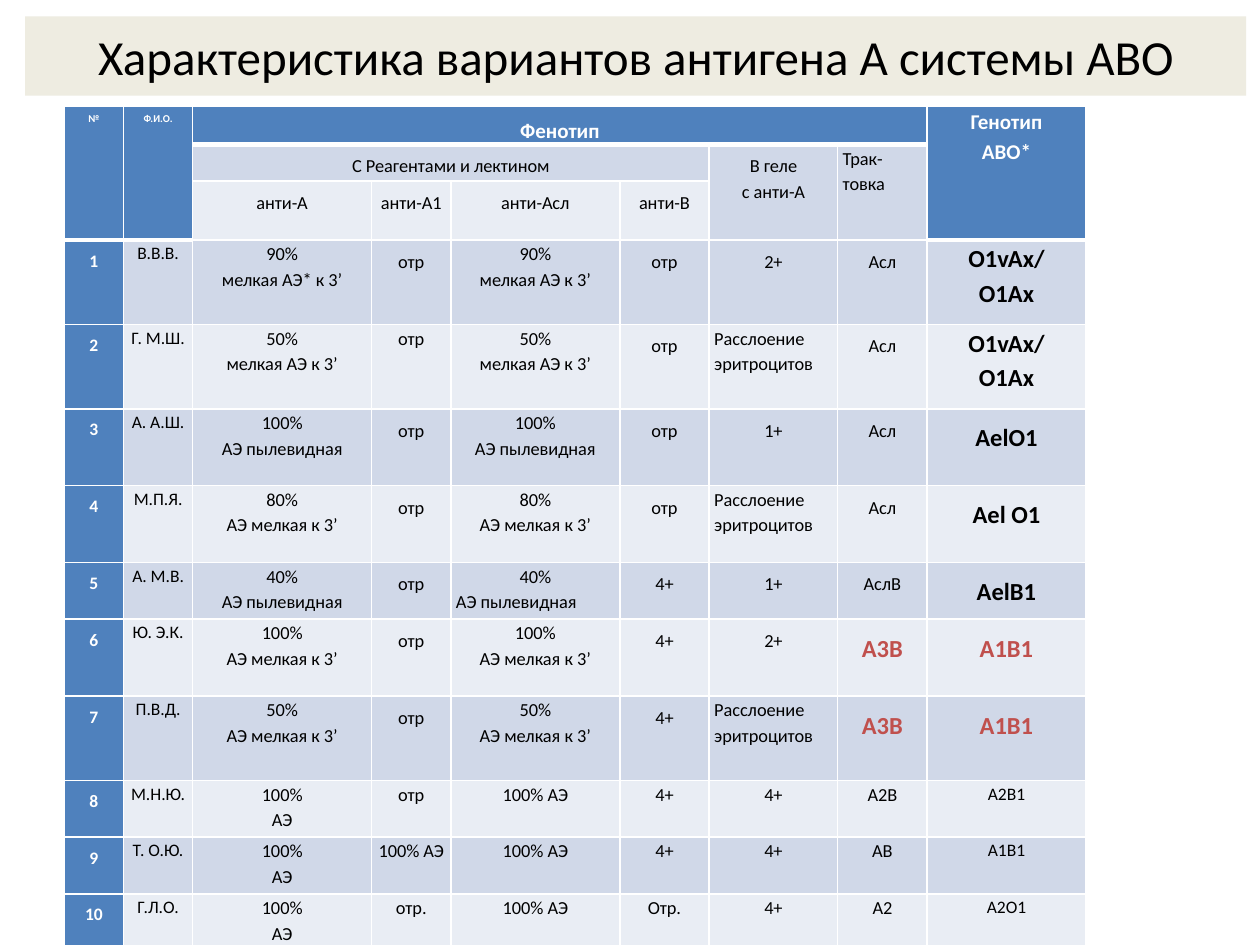
import pptx
import pptx.dml.color
import pptx.enum.text
import pptx.oxml.ns
import pptx.util
from dataclasses import dataclass
from lxml import etree
from pptx.util import Inches

ALIGN = pptx.enum.text.PP_ALIGN


@dataclass(frozen=True)
class Theme:
    font: str = "Calibri"
    white: str = "FFFFFF"
    black: str = "000000"
    title_fill: str = "EEECE1"
    header: str = "4F81BD"
    band_dark: str = "D0D8E8"
    band_light: str = "E9EDF4"
    accent: str = "C0504D"
    title_size: float = 28
    genotype_size: float = 14
    header_size: float = 12
    body_size: float = 10.5
    name_size: float = 10
    corner_size: float = 6
    loose: float = 1.5
    tight: float = 1.15


THEME = Theme()
TITLE = "Характеристика вариантов антигена А системы АВО"
COLUMNS = [0.47, 0.55, 1.42, 0.63, 1.34, 0.71, 1.02, 0.71, 1.26]
ROWS = [0.3, 0.29, 0.47, 0.67, 0.67, 0.61, 0.61, 0.45, 0.61, 0.67, 0.45, 0.45, 0.45]
HEADER_ROWS = 3
NAME, ANTI_A, ANTI_A1, ANTI_ASL, GEL, READING, GENOTYPE = 1, 2, 3, 4, 6, 7, 8
LAYERS = "Расслоение эритроцитов"

# Merged header cells: first row, first column, last row, last column
SPANS = [(0, 0, 2, 0), (0, 1, 2, 1), (0, 2, 0, 7), (0, 8, 2, 8),
         (1, 2, 1, 5), (1, 6, 2, 6), (1, 7, 2, 7)]
TOP_HEADERS = [(0, "№", THEME.corner_size, THEME.loose),
               (1, "Ф.И.О.", THEME.corner_size, THEME.loose),
               (2, "Фенотип", THEME.header_size, THEME.loose),
               (8, "Генотип\nАВО*", THEME.header_size, THEME.tight)]
SUB_HEADERS = [(1, 2, "С Реагентами и лектином"), (1, 6, "В геле\nс анти-А"),
               (1, 7, "Трак-товка"), (2, 2, "анти-А"), (2, 3, "анти-А1"),
               (2, 4, "анти-Асл"), (2, 5, "анти-В")]
PATIENTS = [
    ["В.В.В.", "90%\nмелкая АЭ* к 3’", "отр", "90%\nмелкая АЭ к 3’", "отр", "2+", "Асл", "O1vAx/\nO1Ax"],
    ["Г. М.Ш.", "50%\nмелкая АЭ к 3’", "отр", "50%\nмелкая АЭ к 3’", "отр", LAYERS, "Асл", "O1vAx/\nO1Ax"],
    ["А. А.Ш.", "100%\nАЭ пылевидная", "отр", "100%\nАЭ пылевидная", "отр", "1+", "Асл", "АelO1"],
    ["М.П.Я.", "80%\nАЭ мелкая к 3’", "отр", "80%\nАЭ мелкая к 3’", "отр", LAYERS, "Асл", "Аel O1"],
    ["А. М.В.", "40%\nАЭ пылевидная", "отр", "40%\nАЭ пылевидная", "4+", "1+", "АслB", "АelB1"],
    ["Ю. Э.К.", "100%\nАЭ мелкая к 3’", "отр", "100%\nАЭ мелкая к 3’", "4+", "2+", "А3В", "А1В1"],
    ["П.В.Д.", "50%\nАЭ мелкая к 3’", "отр", "50%\nАЭ мелкая к 3’", "4+", LAYERS, "А3В", "А1В1"],
    ["М.Н.Ю.", "100%\nАЭ", "отр", "100% АЭ", "4+", "4+", "А2В", "А2В1"],
    ["Т. О.Ю.", "100%\nАЭ", "100% АЭ", "100% АЭ", "4+", "4+", "АВ", "А1В1"],
    ["Г.Л.О.", "100%\nАЭ", "отр.", "100% АЭ", "Отр.", "4+", "А2", "А2О1"],
]


def apply(target, values):
    for name, value in values.items():
        setattr(target, name, value)


def paint(fill, color):
    fill.solid()
    fill.fore_color.rgb = pptx.dml.color.RGBColor.from_string(color)


def write(frame, text, size, color=THEME.black, bold=False, align=ALIGN.CENTER, spacing=1.0):
    """Write each line of the text as one paragraph."""
    for index, line in enumerate(text.split("\n")):
        para = frame.add_paragraph() if index else frame.paragraphs[0]
        apply(para, {"alignment": align, "line_spacing": spacing})
        span = para.add_run()
        span.text = line
        apply(span.font, {"name": THEME.font, "size": pptx.util.Pt(size), "bold": bold})
        span.font.color.rgb = pptx.dml.color.RGBColor.from_string(color)


def border(cell, bottom=1):
    properties = cell._tc.get_or_add_tcPr()
    for side, points in (("L", 1), ("R", 1), ("T", 1), ("B", bottom)):
        line = etree.SubElement(properties, pptx.oxml.ns.qn(f"a:ln{side}"),
                                w=str(pptx.util.Pt(points)))
        solid = etree.SubElement(line, pptx.oxml.ns.qn("a:solidFill"))
        etree.SubElement(solid, pptx.oxml.ns.qn("a:srgbClr"), val=THEME.white)


def add_title(page):
    box = page.shapes.title
    apply(box, {"left": Inches(0.2), "top": Inches(0.13),
                "width": Inches(9.69), "height": Inches(0.63)})
    paint(box.fill, THEME.title_fill)
    apply(box.text_frame, {"vertical_anchor": pptx.enum.text.MSO_ANCHOR.MIDDLE,
                           "auto_size": pptx.enum.text.MSO_AUTO_SIZE.NONE})
    write(box.text_frame, TITLE, THEME.title_size)


def add_grid(page):
    table = page.shapes.add_table(len(ROWS), len(COLUMNS), Inches(0.51), Inches(0.84),
                                  Inches(sum(COLUMNS)), Inches(sum(ROWS))).table
    for column, width in zip(table.columns, COLUMNS):
        column.width = Inches(width)
    for row, height in zip(table.rows, ROWS):
        row.height = Inches(height)
    for row in range(len(ROWS)):
        for column in range(len(COLUMNS)):
            cell = table.cell(row, column)
            apply(cell, {"margin_left": Inches(0.04), "margin_right": Inches(0.04),
                         "margin_top": 0, "margin_bottom": 0})
            in_header = row == 0 or (row < HEADER_ROWS and column in (0, NAME, GENOTYPE))
            border(cell, 3 if in_header else 1)
            band = THEME.band_dark if row % 2 else THEME.band_light
            paint(cell.fill, THEME.header if in_header or column == 0 else band)
    for top, left, bottom, right in SPANS:
        table.cell(top, left).merge(table.cell(bottom, right))
    return table


def fill_header(table):
    for column, text, size, spacing in TOP_HEADERS:
        write(table.cell(0, column).text_frame, text, size, THEME.white, True, spacing=spacing)
    for row, column, text in SUB_HEADERS:
        narrow = column == READING
        write(table.cell(row, column).text_frame, text, THEME.body_size,
              align=ALIGN.LEFT if narrow else ALIGN.CENTER,
              spacing=THEME.tight if narrow else THEME.loose)
    table.cell(1, GEL).text_frame.paragraphs[1].line_spacing = THEME.tight


def patient_format(number, column, text):
    """Choose the text format of one result cell."""
    values = {"size": THEME.body_size, "spacing": THEME.loose}
    if (number >= 8 or column in (NAME, ANTI_A, ANTI_ASL) or "\n" in text or text == LAYERS
            or (number, column) == (2, ANTI_A1)):
        values["spacing"] = THEME.tight
    if text == LAYERS:
        values["align"] = ALIGN.LEFT
    if column == NAME or (column == GENOTYPE and number >= 8):
        values["size"] = THEME.name_size
    unusual = number in (6, 7) and column in (READING, GENOTYPE)
    if unusual or (column == GENOTYPE and number < 8):
        values.update(size=THEME.genotype_size, bold=True)
    if unusual:
        values["color"] = THEME.accent
    return values


def fill_patients(table):
    for number, results in enumerate(PATIENTS, 1):
        row = number + HEADER_ROWS - 1
        write(table.cell(row, 0).text_frame, str(number), THEME.name_size,
              THEME.white, True, spacing=THEME.loose)
        for column, text in enumerate(results, 1):
            write(table.cell(row, column).text_frame, text,
                  **patient_format(number, column, text))
    # The fifth patient's second line is set to the left
    table.cell(7, ANTI_ASL).text_frame.paragraphs[1].alignment = ALIGN.LEFT


def main():
    deck = pptx.Presentation()
    apply(deck, {"slide_width": Inches(10), "slide_height": Inches(7.5)})
    page = deck.slides.add_slide(deck.slide_layouts[5])
    add_title(page)
    table = add_grid(page)
    fill_header(table)
    fill_patients(table)
    deck.save("out.pptx")


if __name__ == "__main__":
    main()
